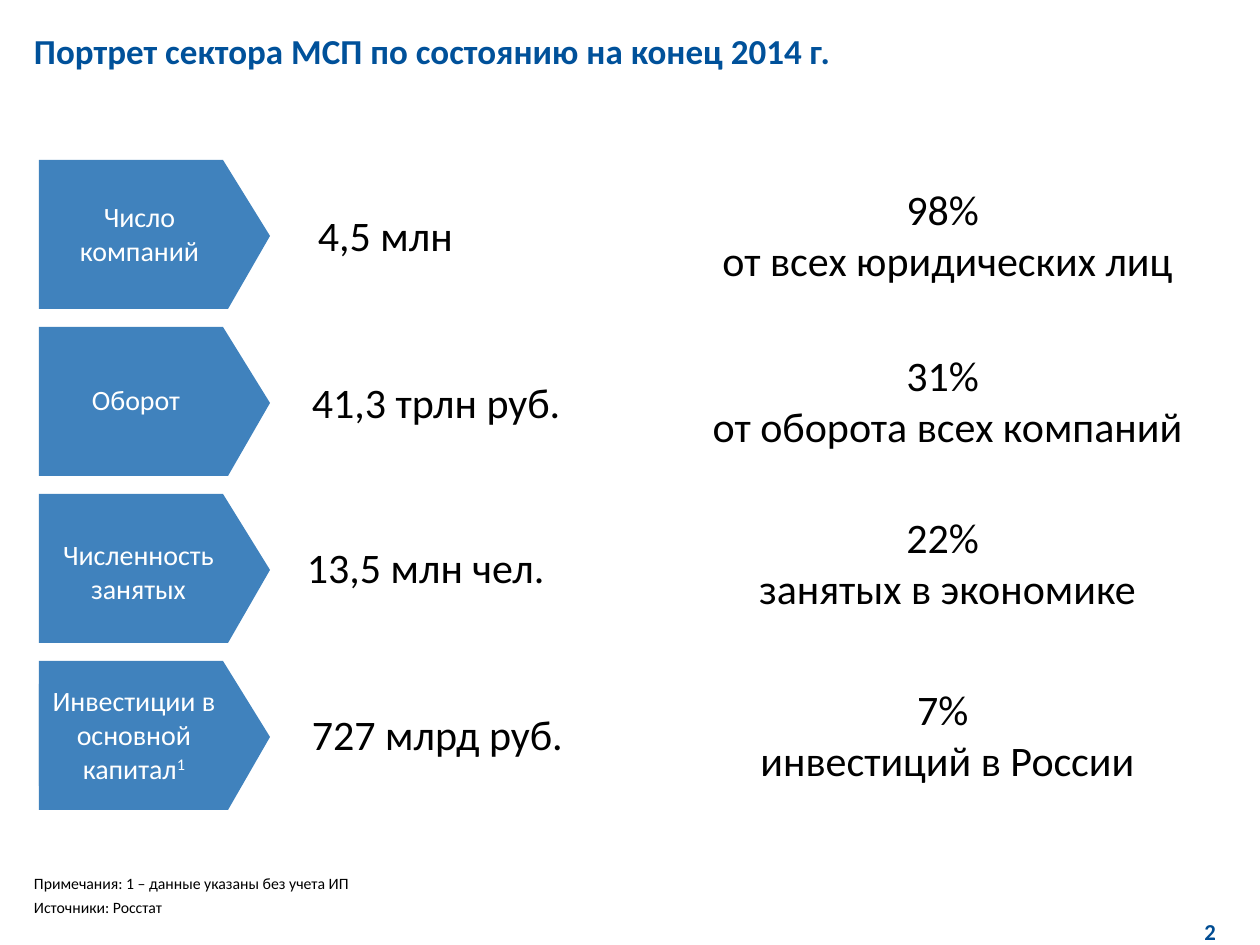
import pptx
import pptx.util
import pptx.dml.color
import pptx.enum.shapes
import pptx.enum.text

PX = 914400 / 126
ALIGN = pptx.enum.text.PP_ALIGN
ANCHOR = pptx.enum.text.MSO_ANCHOR
BLUE, NAVY, WHITE, BLACK = "4082BD", "00519A", "FFFFFF", "000000"


def paint(color_format, color):
    color_format.rgb = pptx.dml.color.RGBColor.from_string(color)


def write(box, lines, size, color=BLACK, align=ALIGN.LEFT, anchor=ANCHOR.TOP, bold=False, gap=0):
    frame = box.text_frame
    frame.word_wrap = True
    frame.vertical_anchor = anchor
    frame.margin_left = frame.margin_right = frame.margin_top = frame.margin_bottom = 0
    for index, line in enumerate(lines):
        para = frame.add_paragraph() if index else frame.paragraphs[0]
        para.alignment = align
        if index and gap:
            para.space_before = pptx.util.Pt(gap)
        span = para.add_run()
        span.text = line
        para.font.size = span.font.size = pptx.util.Pt(size)
        para.font.name = span.font.name = "Calibri"
        span.font.bold = bold
        paint(span.font.color, color)
    return span


deck = pptx.Presentation()
deck.slide_width = pptx.util.Inches(10)
deck.slide_height = pptx.util.Inches(7.5)
page = deck.slides.add_slide(deck.slide_layouts[6])
shapes = page.shapes

title = shapes.add_textbox(*[round(n * PX) for n in (34, 30, 1191, 129)])
write(title, ["Портрет сектора МСП по состоянию на конец 2014 г."], 20, NAVY, bold=True)

rows = [
    ("Число компаний", (67, 200, 145, 68), "4,5 млн", (318, 210, 181, 50),
     ["98% ", "от всех юридических лиц"], 184),
    ("Оборот", (76, 383, 120, 34), "41,3 трлн руб.", (312, 377, 328, 50),
     ["31% ", "от оборота всех компаний"], 350),
    ("Численность занятых", (47, 538, 183, 68), "13,5 млн чел.", (307, 542, 277, 50),
     ["22% ", "занятых в экономике"], 512),
    ("Инвестиции в основной капитал", (39, 684, 190, 102), "727 млрд руб.", (312, 709, 328, 50),
     ["7% ", "инвестиций в России"], 684),
]

for index, (label, label_place, amount, amount_place, share, share_top) in enumerate(rows):
    left, top = 39, 160 + 167 * index
    builder = shapes.build_freeform(left, top, PX)
    builder.add_line_segments(
        [(left + 184, top), (left + 231, top + 76), (left + 189, top + 149), (left, top + 149)],
        close=True,
    )
    arrow = builder.convert_to_shape()
    label_box = shapes.add_shape(
        pptx.enum.shapes.MSO_SHAPE.RECTANGLE, *[round(n * PX) for n in label_place]
    )
    for shape in (arrow, label_box):
        shape.shadow.inherit = False
        shape.fill.solid()
        paint(shape.fill.fore_color, BLUE)
        shape.line.fill.background()
    label_span = write(label_box, [label], 16, WHITE, ALIGN.CENTER)

    amount_box = shapes.add_textbox(*[round(n * PX) for n in amount_place])
    write(amount_box, [amount], 24)
    share_box = shapes.add_textbox(*[round(n * PX) for n in (706, share_top, 483, 102)])
    write(share_box, share, 24, align=ALIGN.CENTER)

footnote_mark = label_box.text_frame.paragraphs[0].add_run()
footnote_mark.text = "1"
footnote_mark.font.name = "Calibri"
footnote_mark.font.size = label_span.font.size
paint(footnote_mark.font.color, WHITE)
footnote_mark.font._element.set("baseline", "30000")

notes = shapes.add_textbox(*[round(n * PX) for n in (34, 873, 1191, 44)])
write(
    notes,
    ["Примечания: 1 – данные указаны без учета ИП", "Источники: Росстат"],
    9, anchor=ANCHOR.BOTTOM, gap=3,
)

number = shapes.add_textbox(*[round(n * PX) for n in (1194, 917, 32, 28)])
write(number, ["2"], 13, "004C92", ALIGN.CENTER, ANCHOR.MIDDLE, bold=True)

deck.save("out.pptx")
